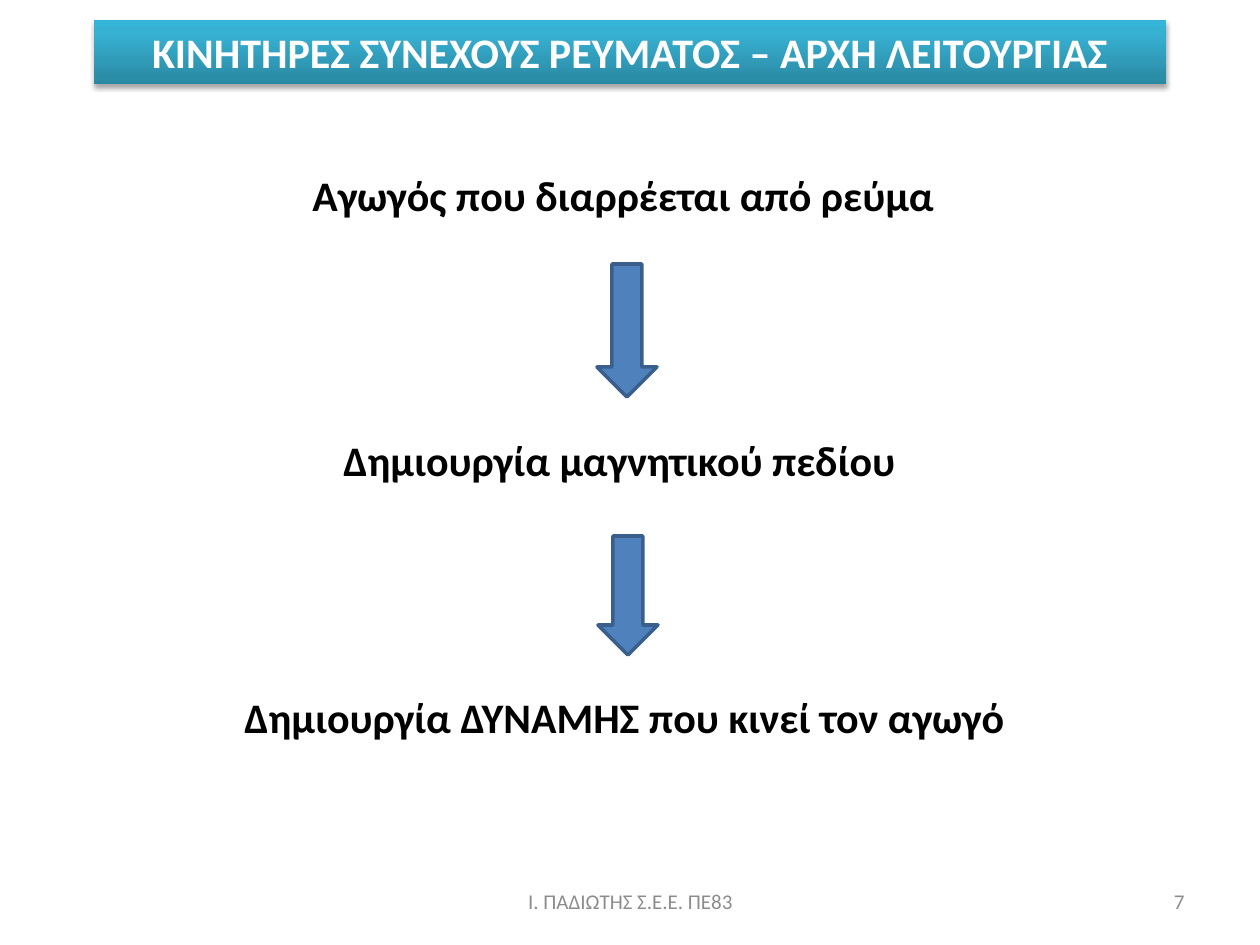
from copy import deepcopy
from typing import NamedTuple

from lxml.etree import SubElement
from pptx import Presentation
from pptx.dml.color import RGBColor
from pptx.enum.shapes import MSO_SHAPE as Preset
from pptx.enum.text import MSO_ANCHOR as Anchor, PP_ALIGN as Align
from pptx.oxml.ns import qn
from pptx.util import Emu, Pt

EMU_PER_PX = 914400 / 126

WHITE = RGBColor(0xFF, 0xFF, 0xFF)
BLACK = RGBColor(0x00, 0x00, 0x00)
GREY = RGBColor(0x8C, 0x8C, 0x8C)
BLUE = RGBColor(0x4F, 0x81, 0xBD)
DARK_BLUE = RGBColor(0x3A, 0x5F, 0x8C)
TEAL_STOPS = (
    (0, RGBColor(0x2A, 0x88, 0xA2)),
    (0.8, RGBColor(0x37, 0xB1, 0xD2)),
    (1, RGBColor(0x34, 0xB4, 0xD6)),
)


class Box(NamedTuple):
    left: int
    top: int
    width: int
    height: int


class Label(NamedTuple):
    text: str
    box: Box
    font: dict
    align: Align = Align.LEFT
    anchor: Anchor = Anchor.TOP


HEADING_FONT = {"name": "Calibri", "size": Pt(24), "bold": True}
STEP_FONT = {**HEADING_FONT, "color": BLACK}
FOOTER_FONT = {"name": "Calibri", "size": Pt(12), "bold": False, "color": GREY}

BANNER = Label("ΚΙΝΗΤΗΡΕΣ ΣΥΝΕΧΟΥΣ ΡΕΥΜΑΤΟΣ – ΑΡΧΗ ΛΕΙΤΟΥΡΓΙΑΣ",
               Box(94, 20, 1072, 64), {**HEADING_FONT, "color": WHITE},
               Align.CENTER, Anchor.MIDDLE)
LABELS = (
    Label("Αγωγός που διαρρέεται από ρεύμα", Box(300, 163, 655, 63), STEP_FONT),
    Label("Δημιουργία μαγνητικού πεδίου", Box(331, 428, 595, 63), STEP_FONT),
    Label("Δημιουργία ΔΥΝΑΜΗΣ που κινεί τον αγωγό", Box(232, 685, 794, 63), STEP_FONT),
    Label("Ι. ΠΑΔΙΩΤΗΣ Σ.Ε.Ε. ΠΕ83", Box(431, 876, 399, 50), FOOTER_FONT,
          Align.CENTER, Anchor.MIDDLE),
    Label("7", Box(903, 876, 294, 50), FOOTER_FONT, Align.RIGHT, Anchor.MIDDLE),
)
ARROWS = (Box(597, 264, 60, 133), Box(598, 536, 60, 119))


def px(length: int) -> Emu:
    return Emu(round(length * EMU_PER_PX))


def write(shape, label: Label) -> None:
    frame = shape.text_frame
    frame.word_wrap = True
    frame.vertical_anchor = label.anchor
    frame.text = label.text
    paragraph = frame.paragraphs[0]
    paragraph.alignment = label.align
    font = paragraph.runs[0].font
    for key, value in label.font.items():
        if key == "color":
            font.color.rgb = value
        else:
            setattr(font, key, value)


def add_label(slide, label: Label) -> None:
    write(slide.shapes.add_textbox(*map(px, label.box)), label)


def add_arrow(slide, box: Box) -> None:
    arrow = slide.shapes.add_shape(Preset.DOWN_ARROW, *map(px, box))
    arrow.shadow.inherit = False
    arrow.fill.solid()
    arrow.fill.fore_color.rgb = BLUE
    arrow.line.color.rgb = DARK_BLUE
    arrow.line.width = Pt(2)


def fill_upward(shape, stops: tuple) -> None:
    """Fill with a gradient whose first stop lies at the bottom edge."""
    shape.fill.gradient()
    shape.fill.gradient_angle = 90
    stop_list = shape.fill._fill._gradFill.find(qn("a:gsLst"))
    while len(stop_list) < len(stops):
        stop_list.append(deepcopy(stop_list[-1]))
    for stop, (position, color) in zip(shape.fill.gradient_stops, stops):
        stop.position = position
        stop.color.rgb = color


def cast_shadow(shape) -> None:
    shape.shadow.inherit = False
    effects = shape._element.spPr.find(qn("a:effectLst"))
    shadow = SubElement(effects, qn("a:outerShdw"), blurRad=str(Pt(3.1)),
                        dist=str(Pt(1.8)), dir="5400000", rotWithShape="0")
    color = SubElement(shadow, qn("a:srgbClr"), val=str(BLACK))
    SubElement(color, qn("a:alpha"), val="35000")


def add_banner(slide) -> None:
    title = slide.shapes.title
    for side, length in BANNER.box._asdict().items():
        setattr(title, side, px(length))
    fill_upward(title, TEAL_STOPS)
    cast_shadow(title)
    write(title, BANNER)


def main() -> None:
    deck = Presentation()
    deck.slide_width, deck.slide_height = px(1260), px(945)
    slide = deck.slides.add_slide(deck.slide_layouts.get_by_name("Title Only"))
    add_banner(slide)
    for label in LABELS:
        add_label(slide, label)
    for box in ARROWS:
        add_arrow(slide, box)
    deck.save("out.pptx")


if __name__ == "__main__":
    main()
